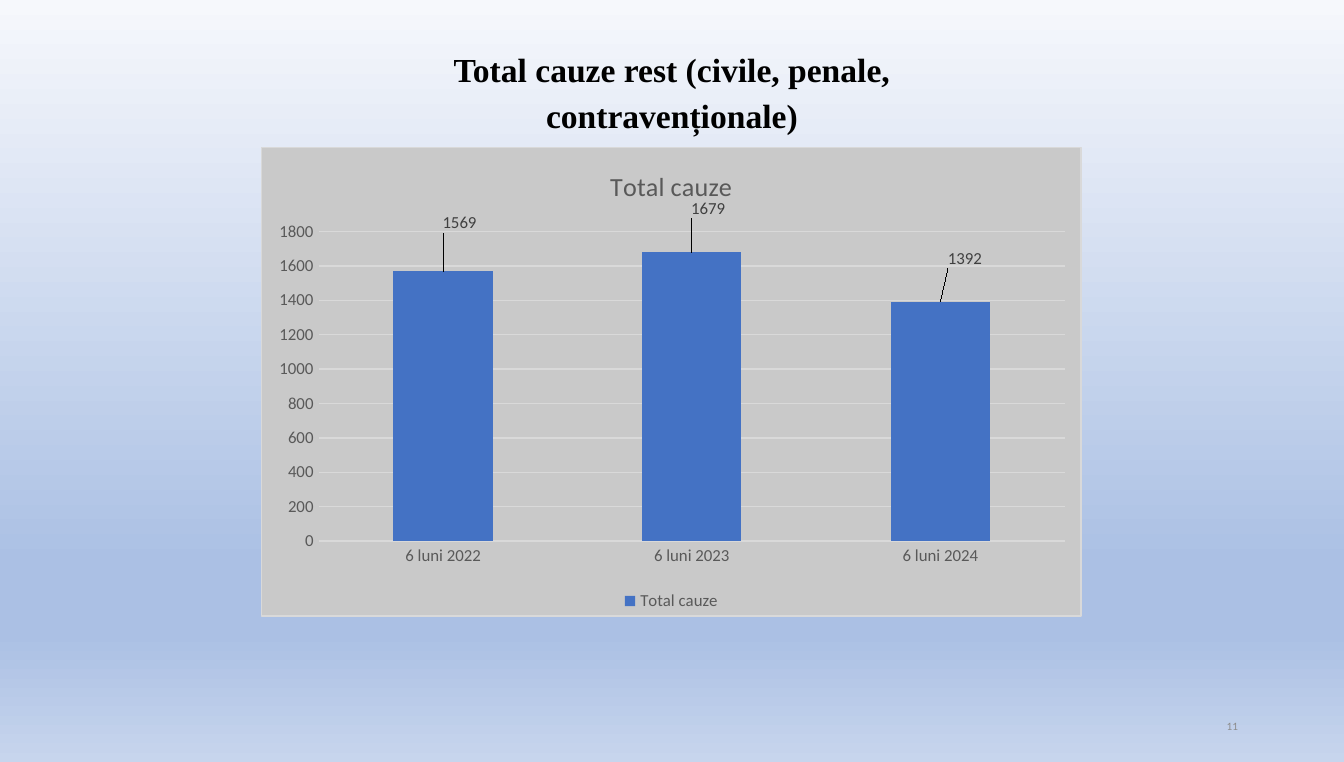
"""Build a slide with a column chart of the total remaining court cases."""
import dataclasses

import pptx
import pptx.chart.data
import pptx.dml.color
import pptx.enum.chart
import pptx.enum.text
import pptx.oxml
import pptx.oxml.ns
import pptx.util

Inches = pptx.util.Inches
Pt = pptx.util.Pt
PP_ALIGN = pptx.enum.text.PP_ALIGN
MSO_ANCHOR = pptx.enum.text.MSO_ANCHOR


@dataclasses.dataclass(frozen=True)
class Theme:
    heading_font: str = "Times New Roman"
    body_font: str = "Calibri"
    black: str = "000000"
    muted: str = "8C8C8C"
    axis: str = "595959"
    label: str = "404040"
    grid: str = "D9D9D9"
    panel: str = "C9C9C9"
    bar: str = "4472C4"
    heading_size: int = 18
    chart_title_size: int = 14
    chart_size: int = 10
    axis_size: int = 9
    number_size: int = 6
    background: tuple = ((0, "F6F8FC"), (74, "ABC0E4"), (83, "ABC0E4"), (100, "C7D5ED"))


def rgb(value):
    return pptx.dml.color.RGBColor.from_string(value)


def xml(tag, body):
    ns = pptx.oxml.ns.nsdecls("a", "c")
    return pptx.oxml.parse_xml(f"<{tag} {ns}>{body}</{tag}>")


def manual_layout(target="", **values):
    body = f'<c:layoutTarget val="{target}"/>' if target else ""
    if target:
        body += '<c:xMode val="edge"/><c:yMode val="edge"/>'
    body += "".join(f'<c:{name} val="{v}"/>' for name, v in values.items())
    return xml("c:layout", f"<c:manualLayout>{body}</c:manualLayout>")


@dataclasses.dataclass
class Builder:
    s: object
    theme: Theme

    def style(self, font, size, color, name=None, bold=False):
        font.name = name or self.theme.body_font
        font.size = Pt(size)
        font.bold = bold
        font.color.rgb = rgb(color)

    def background(self):
        fill = self.s.background.fill
        fill.gradient()
        fill.gradient_angle = 270
        stops = self.s.element.find(".//" + pptx.oxml.ns.qn("a:gsLst"))
        stops[:] = [
            xml("a:gs", f'<a:srgbClr val="{color}"/>') for _, color in self.theme.background
        ]
        for stop, (position, _) in zip(stops, self.theme.background):
            stop.set("pos", str(position * 1000))

    def place(self, sp, left, top, width, height):
        sp.left, sp.top = Inches(left), Inches(top)
        sp.width, sp.height = Inches(width), Inches(height)

    def title(self, text, *box):
        sp = self.s.shapes.title
        self.place(sp, *box)
        tf = sp.text_frame
        tf.text = text
        tf.word_wrap = True
        tf.auto_size = pptx.enum.text.MSO_AUTO_SIZE.SHAPE_TO_FIT_TEXT
        tf.vertical_anchor = MSO_ANCHOR.TOP
        p = tf.paragraphs[0]
        p.alignment = PP_ALIGN.CENTER
        p.line_spacing = 1.15
        p.space_before = Pt(0)
        pPr = p._p.get_or_add_pPr()
        for side in ("marL", "marR"):
            pPr.set(side, str(Inches(0.2)))
        pPr.set("indent", "0")
        t = self.theme
        self.style(p.runs[0].font, t.heading_size, t.black, t.heading_font, True)

    def page_number(self, text, *box):
        sp = self.s.shapes.add_textbox(*map(Inches, box))
        tf = sp.text_frame
        tf.text = text
        tf.word_wrap = True
        tf.vertical_anchor = MSO_ANCHOR.MIDDLE
        p = tf.paragraphs[0]
        p.alignment = PP_ALIGN.RIGHT
        p.line_spacing = 0.9
        self.style(p.runs[0].font, self.theme.number_size, self.theme.muted)

    def axis(self, axis):
        axis.major_tick_mark = pptx.enum.chart.XL_TICK_MARK.NONE
        axis.format.line.fill.background()
        self.style(axis.tick_labels.font, self.theme.axis_size, self.theme.axis)

    def label(self, point, dx, dy):
        label = point.data_label
        self.style(label.font, self.theme.axis_size, self.theme.label)
        label.position = pptx.enum.chart.XL_LABEL_POSITION.OUTSIDE_END
        dLbl = label._get_or_add_dLbl()
        dLbl.insert(1, manual_layout(x=dx, y=dy))

    def column_chart(self, name, values, offsets, *box):
        t = self.theme
        data = pptx.chart.data.CategoryChartData()
        data.categories = list(values)
        data.add_series(name, list(values.values()))
        kind = pptx.enum.chart.XL_CHART_TYPE.COLUMN_CLUSTERED
        chart = self.s.shapes.add_chart(kind, *map(Inches, box), data).chart
        self.style(chart.font, t.chart_size, t.black)

        chart.has_title = True
        tf = chart.chart_title.text_frame
        tf.text = name
        self.style(tf.paragraphs[0].runs[0].font, t.chart_title_size, t.axis)
        chart.chart_title.include_in_layout = False

        chart.has_legend = True
        chart.legend.position = pptx.enum.chart.XL_LEGEND_POSITION.BOTTOM
        chart.legend.include_in_layout = False
        self.style(chart.legend.font, t.axis_size, t.axis)

        self.axis(chart.category_axis)
        self.axis(chart.value_axis)
        chart.value_axis.minimum_scale = 0
        chart.value_axis.maximum_scale = 1800
        chart.value_axis.major_unit = 200
        grid = chart.value_axis.major_gridlines.format.line
        grid.color.rgb = rgb(t.grid)
        grid.width = Pt(0.75)

        plot = chart.plots[0]
        plot.gap_width = 150
        plot.vary_by_categories = False
        series = plot.series[0]
        series.format.fill.solid()
        series.format.fill.fore_color.rgb = rgb(t.bar)
        series.data_labels.show_value = True
        self.style(series.data_labels.font, t.axis_size, t.label)
        for i, offset in enumerate(offsets):
            self.label(series.points[i], *offset)
        self.panel(chart)

    def panel(self, chart):
        t = self.theme
        fill = '<a:solidFill><a:srgbClr val="{}"/></a:solidFill>'
        body = f'{fill.format(t.panel)}<a:ln w="{Pt(0.75)}">{fill.format(t.grid)}</a:ln>'
        space = chart.element
        space.find(pptx.oxml.ns.qn("c:txPr")).addprevious(xml("c:spPr", body))
        area = space.chart.plotArea
        for old in area.findall(pptx.oxml.ns.qn("c:layout")):
            area.remove(old)
        area.insert(0, manual_layout("inner", x=0.07, y=0.18, w=0.91, h=0.66))


def main():
    prs = pptx.Presentation()
    prs.slide_width, prs.slide_height = Inches(10), Inches(5.67)
    slide = Builder(prs.slides.add_slide(prs.slide_layouts[5]), Theme())
    slide.background()
    slide.page_number("11", 7.06, 5.26, 2.25, 0.3)
    slide.title("Total cauze rest (civile, penale, contravenționale)", 2.5, 0.27, 5, 0.78)
    cases = {"6 luni 2022": 1569, "6 luni 2023": 1679, "6 luni 2024": 1392}
    offsets = [(0.02, -0.07), (0.02, -0.06), (0.03, -0.06)]
    slide.column_chart("Total cauze", cases, offsets, 1.94, 1.09, 6.11, 3.5)
    prs.save("out.pptx")


if __name__ == "__main__":
    main()
